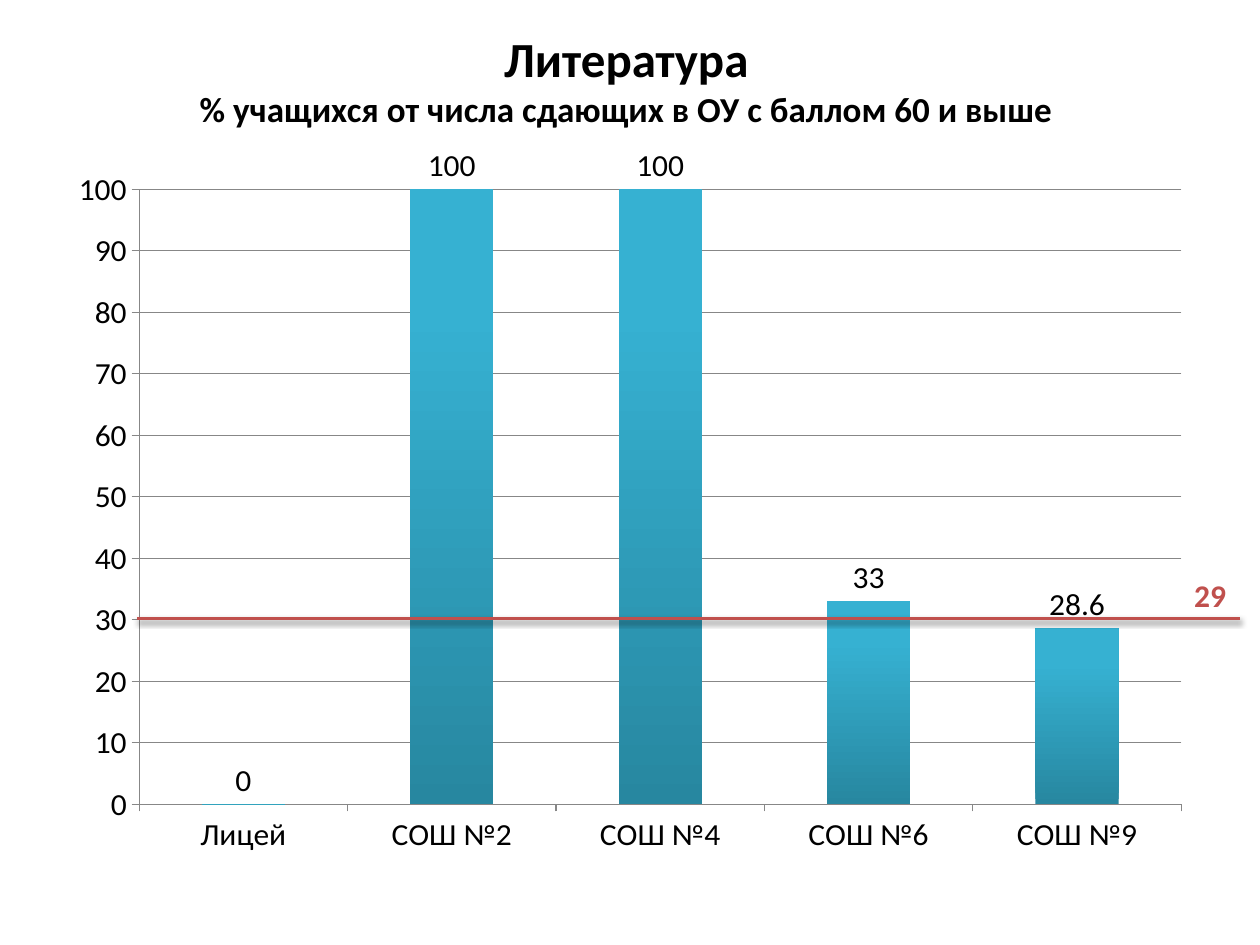
from lxml import etree
from pptx import Presentation, util as u
from pptx.chart.data import CategoryChartData
from pptx.dml.color import RGBColor
from pptx.enum import chart as ch, shapes, text
from pptx.oxml import parse_xml
from pptx.oxml.ns import nsdecls, qn

FONT = "Calibri"
BLACK, RED, GREY = "000000", "C0504D", "878787"
BAR_BOTTOM, BAR_TOP = "2787A0", "36B1D2"
MARGIN = 0.47
RESULTS = {"Лицей": 0, "СОШ №2": 100, "СОШ №4": 100, "СОШ №6": 33, "СОШ №9": 28.6}


def rgb(hex_code):
    return RGBColor.from_string(hex_code)


def box(*inches):
    return [u.Inches(value) for value in inches]


def set_font(font, color, size=None, bold=False):
    font.name, font.bold = FONT, bold
    font.color.rgb = rgb(color)
    if size:
        font.size = u.Pt(size)


def place_title(slide, heading, subtitle):
    title = slide.shapes.title
    title.left, title.top, title.width, title.height = box(MARGIN, 0, 9, 1.25)
    frame = title.text_frame
    frame.vertical_anchor = text.MSO_ANCHOR.MIDDLE
    line = frame.paragraphs[0]
    line.alignment = text.PP_ALIGN.CENTER
    set_font(line.font, BLACK, bold=True)
    for wording, size in ((heading, 28), (subtitle, 20)):
        if line.runs:
            line.add_line_break()
        run = line.add_run()
        run.text = wording
        run.font.size = u.Pt(size)


def set_plot_layout(chart, **shares):
    """Fix the inner plot area as shares of the chart's size."""
    plot_area = chart.plots[0]._element.getparent()
    for old in plot_area.findall(qn("c:layout")):
        plot_area.remove(old)
    layout = parse_xml(f"<c:layout {nsdecls('c')}><c:manualLayout/></c:layout>")
    settings = {"layoutTarget": "inner", "xMode": "edge", "yMode": "edge", **shares}
    for name, value in settings.items():
        etree.SubElement(layout[0], qn(f"c:{name}")).set("val", str(value))
    plot_area.insert(0, layout)


def style_axis(axis):
    axis.major_tick_mark = ch.XL_TICK_MARK.OUTSIDE
    axis.format.line.color.rgb = rgb(GREY)
    axis.format.line.width = u.Pt(0.75)


def add_results_chart(slide):
    data = CategoryChartData()
    data.categories = list(RESULTS)
    data.add_series("Series 1", list(RESULTS.values()))
    chart = slide.shapes.add_chart(
        ch.XL_CHART_TYPE.COLUMN_CLUSTERED, *box(MARGIN, 1.17, 9.06, 5.94), data
    ).chart
    chart.has_legend = chart.has_title = False
    set_font(chart.font, BLACK, 18)
    set_plot_layout(chart, x=0.07, y=0.028, w=0.913, h=0.846)

    # Axes and gridlines
    scale = chart.value_axis
    scale.minimum_scale, scale.maximum_scale, scale.major_unit = 0, 100, 10
    scale.has_major_gridlines = True
    scale.major_gridlines.format.line.color.rgb = rgb(GREY)
    scale.major_gridlines.format.line.width = u.Pt(0.75)
    for axis in (scale, chart.category_axis):
        style_axis(axis)

    # Bars with values above
    plot = chart.plots[0]
    plot.gap_width, plot.vary_by_categories = 150, False
    bars = plot.series[0].format.fill
    bars.gradient()
    bars.gradient_angle = 90
    for stop, color, position in zip(bars.gradient_stops, (BAR_BOTTOM, BAR_TOP), (0, 0.8)):
        stop.color.rgb, stop.position = rgb(color), position
    labels = plot.series[0].data_labels
    labels.show_value = True
    labels.position = ch.XL_LABEL_POSITION.OUTSIDE_END


def add_average_line(slide, left, right, y):
    average = slide.shapes.add_connector(
        shapes.MSO_CONNECTOR.STRAIGHT, *box(left, y, right, y))
    average.line.color.rgb = rgb(RED)
    average.line.width = u.Pt(2)
    average._element.spPr.append(parse_xml(
        f"<a:effectLst {nsdecls('a')}>"
        '<a:outerShdw blurRad="40000" dist="20000" dir="5400000" rotWithShape="0">'
        '<a:srgbClr val="000000"><a:alpha val="38000"/></a:srgbClr>'
        "</a:outerShdw></a:effectLst>"))


def add_average_label(slide, wording):
    frame = slide.shapes.add_textbox(*box(9.38, 4.52, 0.7, 0.4)).text_frame
    frame.word_wrap = True
    frame.auto_size = text.MSO_AUTO_SIZE.SHAPE_TO_FIT_TEXT
    frame.text = wording
    set_font(frame.paragraphs[0].font, RED, 18, bold=True)


def main():
    deck = Presentation()
    deck.slide_width, deck.slide_height = box(10, 7.5)
    slide = deck.slides.add_slide(deck.slide_layouts[5])
    place_title(slide, "Литература",
                "% учащихся от числа сдающих в ОУ с баллом 60 и выше")
    add_results_chart(slide)
    add_average_line(slide, 1.09, 9.84, 4.91)
    add_average_label(slide, "29")
    deck.save("out.pptx")


if __name__ == "__main__":
    main()
